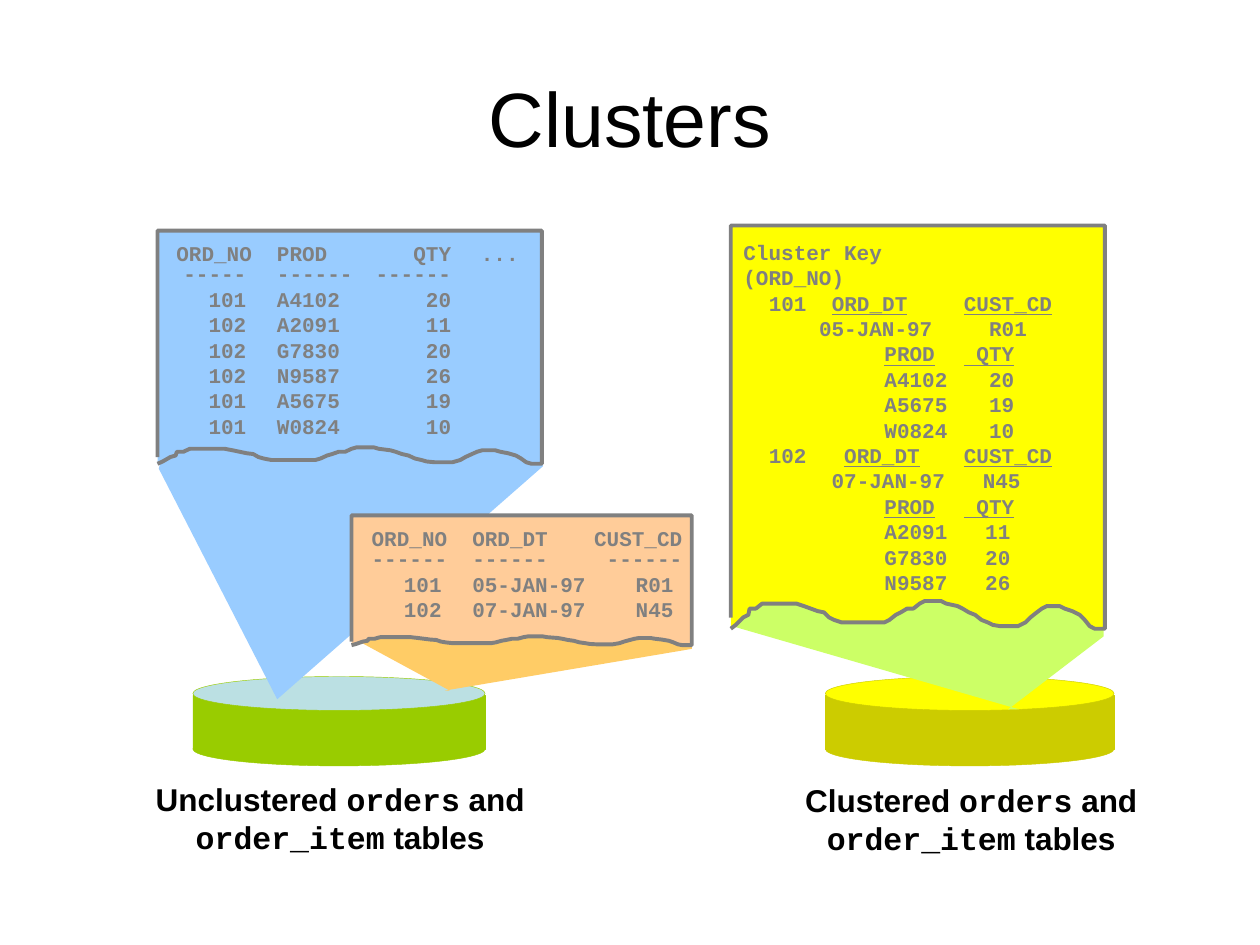
from lxml import etree
from pptx import Presentation
from pptx.dml.color import RGBColor
from pptx.enum.shapes import MSO_SHAPE
from pptx.enum.text import MSO_ANCHOR, PP_ALIGN
from pptx.oxml.ns import qn
from pptx.util import Pt

RECT, OVAL = MSO_SHAPE.RECTANGLE, MSO_SHAPE.OVAL
MIDDLE, TOP = MSO_ANCHOR.MIDDLE, MSO_ANCHOR.TOP
CENTER, LEFT = PP_ALIGN.CENTER, PP_ALIGN.LEFT

TORN_EDGE_SIZE = (297, 22)
TORN_EDGE = [
    (297, 0), (289, 0), (285, 2), (281, 7), (277, 11), (271, 14), (265, 16), (261, 18),
    (257, 18), (251, 18), (247, 16), (243, 13), (238, 9), (234, 5), (228, 2), (223, 2),
    (218, 2), (214, 2), (208, 3), (204, 5), (199, 7), (194, 11), (189, 13), (184, 16),
    (180, 18), (171, 20), (167, 22), (163, 22), (159, 22), (154, 22), (150, 20), (145, 16),
    (140, 16), (135, 13), (131, 11), (126, 7), (122, 5), (116, 5), (108, 5), (104, 5),
    (92, 5), (88, 5), (82, 7), (78, 9), (74, 13), (69, 14), (58, 18), (52, 20), (47, 20),
    (42, 20), (31, 20), (25, 20), (20, 16), (15, 16), (14, 11), (10, 9), (4, 3), (0, 0),
]


def rgb(value):
    return RGBColor.from_string(value)


class Deck:
    sans, mono = "Arial", "Courier New"
    ink, grey = "000000", "808080"

    def __init__(self, width, height):
        self.prs = Presentation()
        self.prs.slide_width, self.prs.slide_height = Pt(width), Pt(height)
        self.s = self.prs.slides.add_slide(self.prs.slide_layouts[5])

    def paint(self, sp, fill, line=None, weight=0.25):
        sp.shadow.inherit = False
        sp.fill.solid()
        sp.fill.fore_color.rgb = rgb(fill)
        if line:
            sp.line.color.rgb = rgb(line)
            sp.line.width = Pt(weight)
        else:
            sp.line.fill.background()

    def run(self, p, text, color, **font):
        r = p.add_run()
        r.text = text
        r.font.color.rgb = rgb(color)
        for name, value in font.items():
            setattr(r.font, name, value)

    def title(self, text, x, y, w, h):
        sp = self.s.shapes.title
        box = {"left": x, "top": y, "width": w, "height": h}
        for name, value in box.items():
            setattr(sp, name, Pt(value))
        tf = sp.text_frame
        tf.vertical_anchor = MIDDLE
        p = tf.paragraphs[0]
        p.alignment = CENTER
        self.run(p, text, self.ink, name=self.sans, size=Pt(44))

    def textbox(self, x, y, w, h):
        tf = self.s.shapes.add_textbox(Pt(x), Pt(y), Pt(w), Pt(h)).text_frame
        frame = {
            "word_wrap": True, "vertical_anchor": TOP,
            "margin_left": Pt(6.5), "margin_right": Pt(6.5),
            "margin_top": Pt(3.6), "margin_bottom": Pt(3.6),
        }
        for name, value in frame.items():
            setattr(tf, name, value)
        return tf

    def caption(self, parts, x, y, w, h):
        p = self.textbox(x, y, w, h).paragraphs[0]
        p.alignment = CENTER
        for i, text in enumerate(parts):
            font = self.mono if i % 2 else self.sans
            self.run(p, text, self.ink, name=font, size=Pt(18), bold=True)

    def listing(self, rows, x, y, w, h):
        tf = self.textbox(x, y, w, h)
        for i, (stops, text) in enumerate(rows):
            p = tf.add_paragraph() if i else tf.paragraphs[0]
            layout = {"alignment": LEFT, "line_spacing": 0.8, "space_before": Pt(3)}
            for name, value in layout.items():
                setattr(p, name, value)
            self.tabs(p, stops)
            for n, line in enumerate(text.split("\n")):
                if n:
                    p.add_line_break()
                for k, part in enumerate(line.split("|")):
                    if part:
                        self.run(p, part, self.grey, name=self.mono, size=Pt(12),
                                 bold=True, underline=k % 2 == 1)

    def tabs(self, p, stops):
        if not stops:
            return
        tab_list = etree.SubElement(p._p.get_or_add_pPr(), qn("a:tabLst"))
        for align, pos in stops:
            etree.SubElement(tab_list, qn("a:tab"), pos=str(Pt(pos)), algn=align)

    def polygon(self, points, fill, line=None, weight=0.25):
        points = [(Pt(x), Pt(y)) for x, y in points]
        builder = self.s.shapes.build_freeform(*points[0])
        builder.add_line_segments(points[1:], close=line is None)
        self.paint(builder.convert_to_shape(), fill, line, weight)

    def sheet(self, x, y, w, h, depth, fill):
        across, deep = TORN_EDGE_SIZE
        bottom = y + h
        edge = [(x + w * u / across, bottom - depth * v / deep) for u, v in TORN_EDGE]
        start = (x, bottom - depth * 0.4)
        self.polygon([start, (x, y), (x + w, y)] + edge, fill, self.grey, 2.25)

    def cylinder(self, x, y, w, side, lid):
        parts = [(RECT, 10.8, 31, side), (OVAL, 0, 19.4, lid), (OVAL, 31.7, 19.4, side)]
        for kind, dy, h, fill in parts:
            sp = self.s.shapes.add_shape(kind, Pt(x), Pt(y + dy), Pt(w), Pt(h))
            self.paint(sp, fill, side)


def order_rows():
    key, date = [("l", 14.5)], [("l", 50.5)]
    detail = [("l", 80.6), ("l", 126)]
    wide, narrow = [("l", 80.6), ("l", 140.4)], [("l", 80.6), ("l", 138.2)]
    return [
        ([], "Cluster Key"),
        ([], "(ORD_NO)"),
        (key + date + [("l", 126)], "\t101\t|ORD_DT|\t|CUST_CD|"),
        ([("l", 43.2), ("l", 140.4)], "\t05-JAN-97\tR01"),
        (detail, "\t|PROD|\t| QTY|"),
        (wide, "\tA4102\t20"),
        (wide, "\tA5675\t19"),
        (wide, "\tW0824\t10"),
        (key + [("l", 57.6), ("l", 126)], "\t102\t|ORD_DT|\t|CUST_CD|"),
        ([("l", 50.4), ("l", 136.8)], "\t07-JAN-97\tN45"),
        (detail, "\t|PROD|\t| QTY|"),
        (narrow, "\tA2091\t11"),
        (narrow, "\tG7830\t20"),
        (narrow, "\tN9587\t26"),
    ]


def main():
    deck = Deck(720, 540)
    deck.title("Clusters", 36, 21.6, 648, 90)

    deck.cylinder(471.6, 386.6, 165, "CCCC00", "FFFF00")
    deck.cylinder(110.2, 386.6, 167, "99CC00", "BBE0E3")

    names = ["orders", " and ", "order_item", " tables"]
    deck.caption(["Clustered "] + names, 447, 442.8, 216, 49.7)
    deck.polygon([(582.5, 405.4), (418.3, 357.8), (418.3, 129.6), (630.7, 129.6),
                  (630.7, 363.6), (576, 405.4)], "CCFF66")
    deck.sheet(417.6, 128.9, 213.8, 230.4, 15.8, "FFFF00")
    deck.listing(order_rows(), 418.3, 136, 214.6, 205)

    deck.caption(["Unclustered "] + names, 67.7, 442, 253.4, 49.7)
    deck.polygon([(158.4, 399.6), (90.7, 267.8), (97.2, 245.5), (301.7, 247),
                  (310.3, 266.4)], "99CCFF")
    deck.polygon([(257, 394.6), (203.8, 365.8), (203.8, 295.2), (395.3, 295.2),
                  (395.3, 370.8), (254.2, 394.6)], "FFCC66")

    first_columns = [("r", 40), ("l", 57.5)]
    head, body = (first_columns + [("r", pos)] for pos in (177.5, 172.5))
    deck.sheet(200.9, 294.5, 194.4, 74.2, 5, "FFCC99")
    deck.listing([
        (head, "\tORD_NO\tORD_DT\tCUST_CD\n\t------\t------\t------"),
        (body, "\t101\t05-JAN-97\tR01"),
        (body, "\t102\t07-JAN-97\tN45"),
    ], 205.9, 299.5, 200, 72.7)

    items = first_columns + [("r", 157), ("l", 174)]
    lines = ["101\tA4102\t20", "102\tA2091\t11", "102\tG7830\t20",
             "102\tN9587\t26", "101\tA5675\t19", "101\tW0824\t10"]
    deck.sheet(90, 131.8, 219.6, 133.2, 9.4, "99CCFF")
    deck.listing(
        [(items, "\tORD_NO\tPROD\tQTY\t...\n\t-----\t------\t------")]
        + [(items, "\t" + line) for line in lines],
        94.3, 136.8, 216, 116)

    deck.prs.save("out.pptx")


if __name__ == "__main__":
    main()
